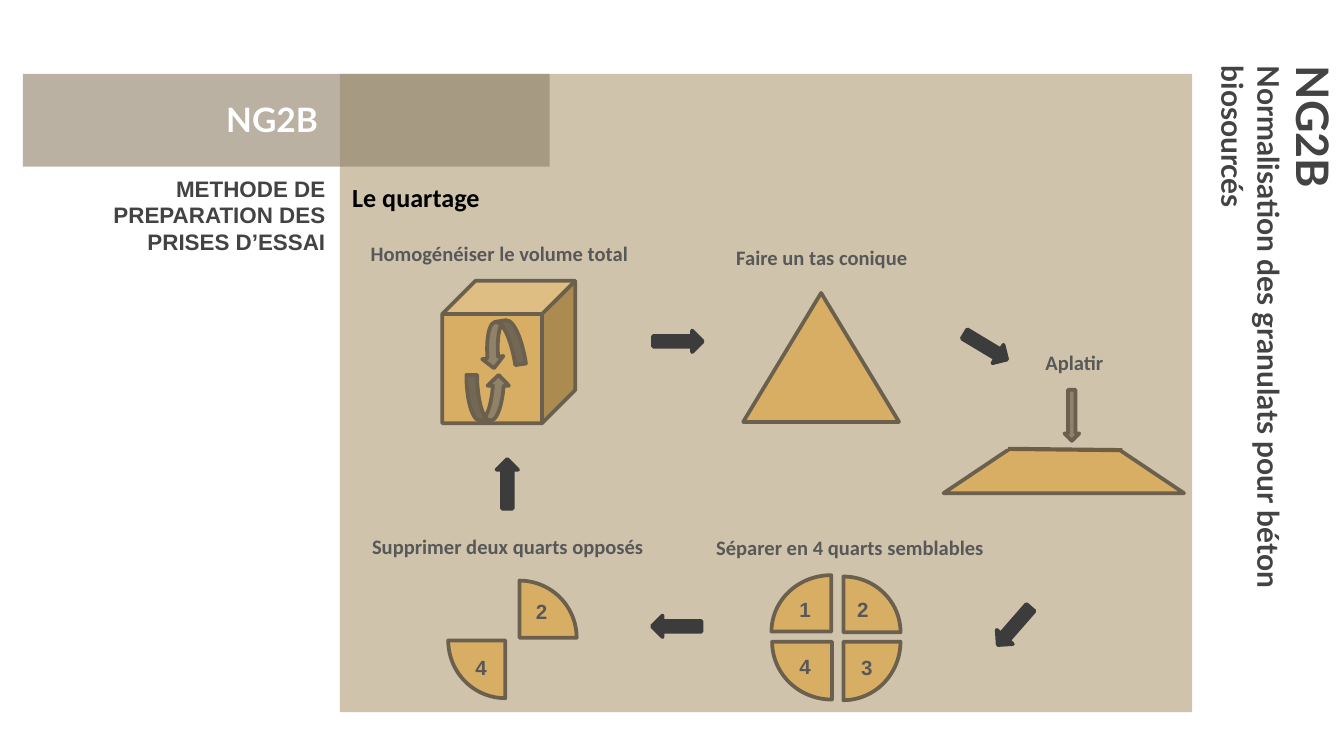
from lxml import etree
from pptx import Presentation
from pptx.dml.color import RGBColor
from pptx.enum.shapes import MSO_CONNECTOR, MSO_SHAPE
from pptx.enum.text import MSO_ANCHOR, PP_ALIGN
from pptx.oxml.ns import qn
from pptx.util import Inches, Pt

RECTANGLE = MSO_SHAPE.RECTANGLE
TRIANGLE = MSO_SHAPE.ISOSCELES_TRIANGLE
CUBE = MSO_SHAPE.CUBE
PIE = MSO_SHAPE.PIE
CURVED_ARROW = MSO_SHAPE.CURVED_UP_ARROW
RIGHT_ARROW = MSO_SHAPE.RIGHT_ARROW
DOWN_ARROW = MSO_SHAPE.DOWN_ARROW
STRAIGHT = MSO_CONNECTOR.STRAIGHT
LEFT, CENTER, RIGHT = PP_ALIGN.LEFT, PP_ALIGN.CENTER, PP_ALIGN.RIGHT
TOP, MIDDLE = MSO_ANCHOR.TOP, MSO_ANCHOR.MIDDLE

SAND, TAUPE, GOLD = "CFC3AC", "908269", "D8AE65"
BROWN, CHARCOAL = "6B604E", "3C3C3C"
DARK_GREY, GREY = "434343", "585858"


def color(value):
    return RGBColor.from_string(value)


def add_shape(slide, kind, box, fill, line=None, rotation=0, opacity=None):
    shape = slide.shapes.add_shape(kind, *map(Inches, box))
    shape.shadow.inherit = False
    shape.rotation = rotation
    shape.fill.solid()
    shape.fill.fore_color.rgb = color(fill)
    if opacity is not None:
        rgb = shape.fill._xPr.find(".//" + qn("a:srgbClr"))
        etree.SubElement(rgb, qn("a:alpha"), val=str(opacity * 1000))
    if line:
        shape.line.color.rgb = color(line)
        shape.line.width = Pt(2)
    else:
        shape.line.fill.background()
    return shape


def add_text(slide, text, box, size=11, font="Calibri", fill=GREY, align=LEFT,
             anchor=MIDDLE, wrap=True, insets=(0.1, 0.1, 0.1, 0.1),
             rotation=0):
    shape = slide.shapes.add_textbox(*map(Inches, box))
    shape.rotation = rotation
    frame = shape.text_frame
    frame.word_wrap = wrap
    frame.vertical_anchor = anchor
    (frame.margin_left, frame.margin_top,
     frame.margin_right, frame.margin_bottom) = map(Inches, insets)
    paragraph = frame.paragraphs[0]
    paragraph.alignment = align
    lines = [(text, size)] if isinstance(text, str) else text
    for index, (line_text, line_size) in enumerate(lines):
        if index:
            paragraph.add_line_break()
        run = paragraph.add_run()
        run.text = line_text
        run.font.size = Pt(line_size)
        run.font.name = font
        run.font.bold = True
        run.font.color.rgb = color(fill)


def add_label(slide, text, left, top, width):
    add_text(slide, text, (left, top, width, 0.29), wrap=False,
             insets=(0.1, 0.05, 0.1, 0.05))


def draw_side_title(slide, left, top):
    lines = [("NG2B", 24),
             ("Normalisation des granulats pour béton biosourcés", 16)]
    add_text(slide, lines, (left, top, 5, 0.94), font="Lato", fill=DARK_GREY,
             insets=(0.1, 0, 0.1, 0), rotation=90)


def draw_heading(slide, left, top):
    add_shape(slide, RECTANGLE, (left, top, 3.92, 0.69), TAUPE, opacity=62)
    add_text(slide, "NG2B", (left + 0.09, top + 0.09, 3.53, 0.49), size=18,
             font="Lato", fill="FFFFFF", align=CENTER)
    add_text(slide, "METHODE DE PREPARATION DES PRISES D’ESSAI",
             (left + 0.02, top + 0.65, 2.33, 0.9), size=12, font="Arial",
             fill=DARK_GREY, align=RIGHT, anchor=TOP,
             insets=(0.29, 0.1, 0.1, 0.1))
    add_text(slide, "Le quartage", (left + 2.16, top + 0.7, 6.29, 3.33),
             size=14, fill="000000", anchor=TOP, insets=(0.29, 0.1, 0.1, 0.1))


def draw_mixing(slide, left, top):
    add_label(slide, "Homogénéiser le volume total", left, top, 2.2)
    add_shape(slide, CUBE, (left + 0.63, top + 0.35, 0.99, 1.06), GOLD, BROWN)
    for x, y, rotation in [(0.81, 1.05, 0), (0.91, 0.65, 171.6)]:
        add_shape(slide, CURVED_ARROW, (left + x, top + y, 0.32, 0.34),
                  TAUPE, BROWN, rotation)


def draw_cone(slide, left, top):
    add_label(slide, "Faire un tas conique", left, top, 1.53)
    add_shape(slide, TRIANGLE, (left + 0.15, top + 0.41, 1.16, 0.96),
              GOLD, BROWN)


def draw_flattening(slide, left, top):
    add_label(slide, "Aplatir", left + 0.66, top, 0.66)
    add_shape(slide, TRIANGLE, (left, top + 0.52, 1.79, 0.6), GOLD, BROWN)
    add_shape(slide, RECTANGLE, (left + 0.18, top + 0.33, 1.45, 0.46), SAND)
    add_shape(slide, DOWN_ARROW, (left + 0.9, top + 0.35, 0.11, 0.38),
              TAUPE, BROWN)
    edge = slide.shapes.add_connector(
        STRAIGHT, Inches(left + 0.48), Inches(top + 0.79),
        Inches(left + 1.33), Inches(top + 0.8))
    edge.line.color.rgb = color("6E5E43")
    edge.line.width = Pt(2.25)
    etree.SubElement(edge._element.spPr, qn("a:effectLst"))


def draw_quarters(slide, title, left, top, width, quarters):
    add_label(slide, title, left, top, width)
    for number, rotation, x, y, pie_width, pie_height, text_x, text_y in quarters:
        pie = add_shape(slide, PIE, (left + x, top + y, pie_width, pie_height),
                        GOLD, BROWN, rotation)
        pie.adjustments[0] = 108
        pie.adjustments[1] = 162
        add_text(slide, number, (left + text_x, top + text_y, 0.14, 0.29),
                 font="Arial", align=CENTER, wrap=False, insets=(0.02, 0, 0, 0))


def draw_step_arrows(slide, left, top):
    arrows = [(2.33, 1.91, 0), (4.62, 1.95, 30.9), (4.83, 4.03, 131.1),
              (2.32, 4.03, 180), (1.06, 2.97, 270)]
    for x, y, rotation in arrows:
        add_shape(slide, RIGHT_ARROW, (left + x, top + y, 0.37, 0.16),
                  CHARCOAL, CHARCOAL, rotation)


def draw_cycle(slide, left, top):
    draw_mixing(slide, left + 0.13, top + 1.19)
    draw_cone(slide, left + 2.85, top + 1.22)
    draw_flattening(slide, left + 4.49, top + 2)
    draw_quarters(slide, "Séparer en 4 quarts semblables",
                  left + 2.7, top + 3.38, 2.27, [
                      ("4", 270, 0.53, 0.4, 0.86, 0.89, 0.68, 0.88),
                      ("1", 0, 0.51, 0.35, 0.89, 0.84, 0.68, 0.46),
                      ("2", 90, 0.63, 0.35, 0.83, 0.85, 1.11, 0.46),
                      ("3", 180, 0.62, 0.41, 0.85, 0.87, 1.14, 0.89)])
    draw_quarters(slide, "Supprimer deux quarts opposés",
                  left + 0.14, top + 3.37, 2.3, [
                      ("2", 90, 0.77, 0.4, 0.85, 0.85, 1.28, 0.48),
                      ("4", 270, 0.66, 0.42, 0.86, 0.85, 0.83, 0.9)])
    draw_step_arrows(slide, left, top)


def main():
    presentation = Presentation()
    presentation.slide_width = Inches(10)
    presentation.slide_height = presentation.slide_width * 9 // 16
    slide = presentation.slides.add_slide(presentation.slide_layouts[6])
    add_shape(slide, RECTANGLE, (2.53, 0.55, 6.34, 4.75), SAND)
    draw_side_title(slide, 7.01, 2.42)
    draw_heading(slide, 0.17, 0.55)
    draw_cycle(slide, 2.53, 0.55)
    presentation.save("out.pptx")


if __name__ == "__main__":
    main()
